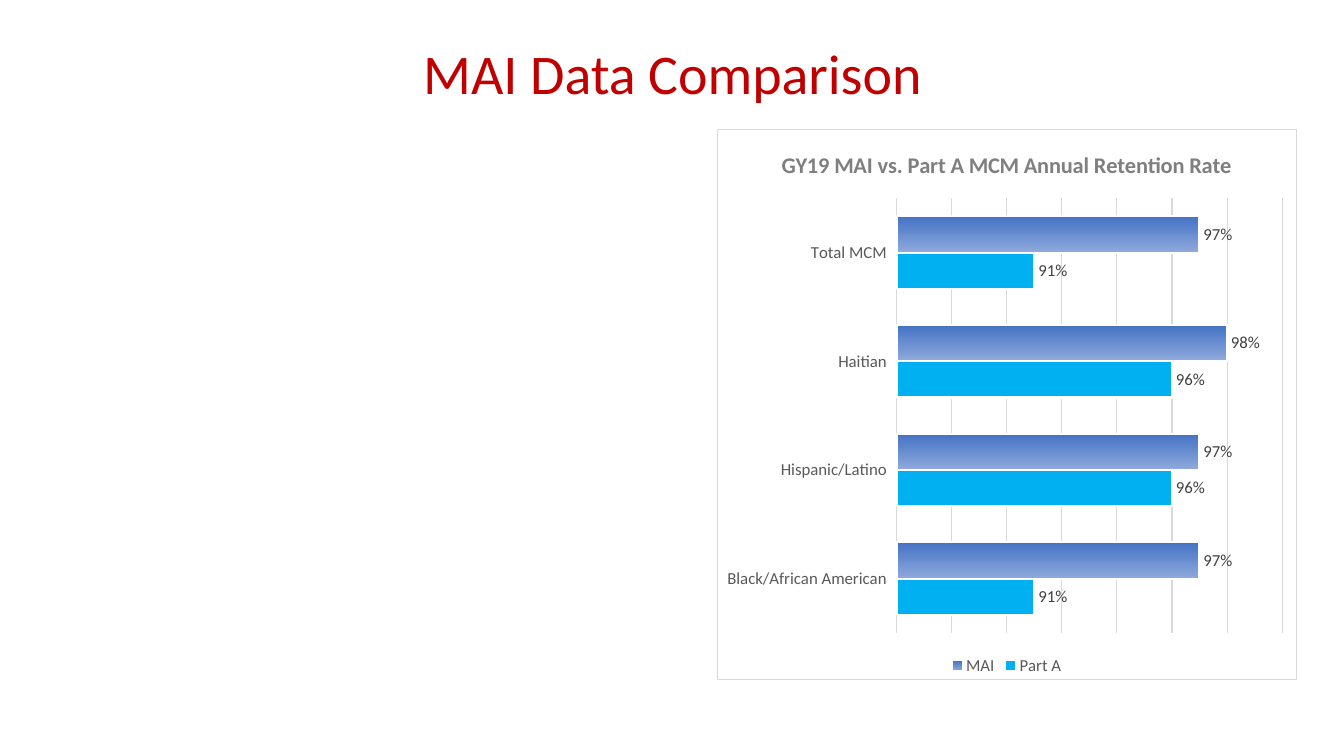
from lxml import etree
from pptx import Presentation
from pptx.chart import data as cd
from pptx.dml.color import RGBColor
from pptx.enum import chart as ec, text as et
from pptx.oxml import parse_xml
from pptx.oxml.ns import qn
from pptx.util import Inches, Pt

HUES = {"red": "C00000", "sky": "00B0F0", "blue": "4472C4", "pale": "8FAADC",
        "grid": "D9D9D9", "axis": "595959", "label": "404040",
        "head": "7F7F7F", "white": "FFFFFF"}
FACE = "Calibri"
TITLE = "MAI Data Comparison"
HEAD = "GY19 MAI vs. Part A MCM Annual Retention Rate"
CATS = ["Black/African American", "Hispanic/Latino", "Haitian", "Total MCM"]
RATES = {"Part A": (0.91, 0.96, 0.96, 0.91), "MAI": (0.97, 0.97, 0.98, 0.97)}
FILLS = {"Part A": ["sky"], "MAI": ["blue", "pale"]}
TITLE_BOX = (0.92, 0.4, 11.5, 0.72)
CHART_BOX = (7.11, 1.28, 5.75, 5.47)
PLOT = {"x": 0.31, "y": 0.125, "w": 0.666, "h": 0.79}


def rgb(name):
    return RGBColor.from_string(HUES[name])


def style(font, size, hue, bold=False):
    font.name, font.size, font.bold = FACE, Pt(size), bold
    font.color.rgb = rgb(hue)


def write(frame, words, size, hue, bold=False, spacing=None):
    para = frame.paragraphs[0]
    para.alignment = et.PP_ALIGN.CENTER
    para.line_spacing = spacing
    run = para.add_run()
    run.text = words
    style(run.font, size, hue, bold)


def paint(fill, hues):
    if len(hues) == 1:
        fill.solid()
        fill.fore_color.rgb = rgb(hues[0])
        return
    fill.gradient()
    fill.gradient_angle = 270
    for stop, hue, spot in zip(fill.gradient_stops, hues, (0, 1)):
        stop.color.rgb, stop.position = rgb(hue), spot


def place(area):
    layout = area.find(qn("c:layout"))
    if layout is None:
        layout = etree.Element(qn("c:layout"))
        area.insert(0, layout)
    manual = etree.SubElement(layout, qn("c:manualLayout"))
    modes = {"layoutTarget": "inner", "xMode": "edge", "yMode": "edge"}
    for tag, val in {**modes, **PLOT}.items():
        etree.SubElement(manual, qn("c:" + tag)).set("val", str(val))


def border(space):
    space.find(qn("c:chart")).addnext(parse_xml(
        '<c:spPr xmlns:c="http://schemas.openxmlformats.org/drawingml/2006/chart"'
        ' xmlns:a="http://schemas.openxmlformats.org/drawingml/2006/main">'
        f'<a:solidFill><a:srgbClr val="{HUES["white"]}"/></a:solidFill>'
        f'<a:ln w="{Pt(0.75)}"><a:solidFill><a:srgbClr val="{HUES["grid"]}"/>'
        '</a:solidFill></a:ln></c:spPr>'))


def build(slide):
    data = cd.CategoryChartData(number_format="0%")
    data.categories = CATS
    for name, vals in RATES.items():
        data.add_series(name, vals)
    chart = slide.shapes.add_chart(
        ec.XL_CHART_TYPE.BAR_CLUSTERED, *map(Inches, CHART_BOX), data).chart
    style(chart.font, 10, "axis")
    chart.has_title = True
    write(chart.chart_title.text_frame, HEAD, 16, "head", bold=True)
    chart.chart_title.include_in_layout = False
    chart.has_legend = True
    chart.legend.position = ec.XL_LEGEND_POSITION.BOTTOM
    chart.legend.include_in_layout = False
    style(chart.legend.font, 12, "axis")

    cat = chart.category_axis
    style(cat.tick_labels.font, 12, "axis")
    cat.format.line.fill.background()
    val = chart.value_axis
    val.minimum_scale, val.maximum_scale, val.major_unit = 0.86, 1, 0.02
    val.has_major_gridlines = True
    line = val.major_gridlines.format.line
    line.color.rgb, line.width = rgb("grid"), Pt(0.75)
    val.visible = False

    plot = chart.plots[0]
    plot.gap_width, plot.overlap, plot.vary_by_categories = 100, 0, False
    for bars in plot.series:
        paint(bars.format.fill, FILLS[bars.name])
        bars.format.line.color.rgb = rgb("white")
        bars.format.line.width = Pt(1.5)
        tags = bars.data_labels
        tags.show_value = True
        tags.number_format, tags.number_format_is_linked = "0%", False
        tags.position = ec.XL_LABEL_POSITION.OUTSIDE_END
        style(tags.font, 12, "label")
    space = chart.element if hasattr(chart, "element") else chart._chartSpace
    place(space.find(".//" + qn("c:plotArea")))
    border(space)


def main():
    deck = Presentation()
    deck.slide_width, deck.slide_height = Inches(13.33), Inches(7.5)
    slide = deck.slides.add_slide(deck.slide_layouts[6])
    frame = slide.shapes.add_textbox(*map(Inches, TITLE_BOX)).text_frame
    frame.word_wrap = True
    frame.vertical_anchor = et.MSO_ANCHOR.MIDDLE
    write(frame, TITLE, 40, "red", spacing=0.9)
    build(slide)
    deck.save("out.pptx")


if __name__ == "__main__":
    main()
